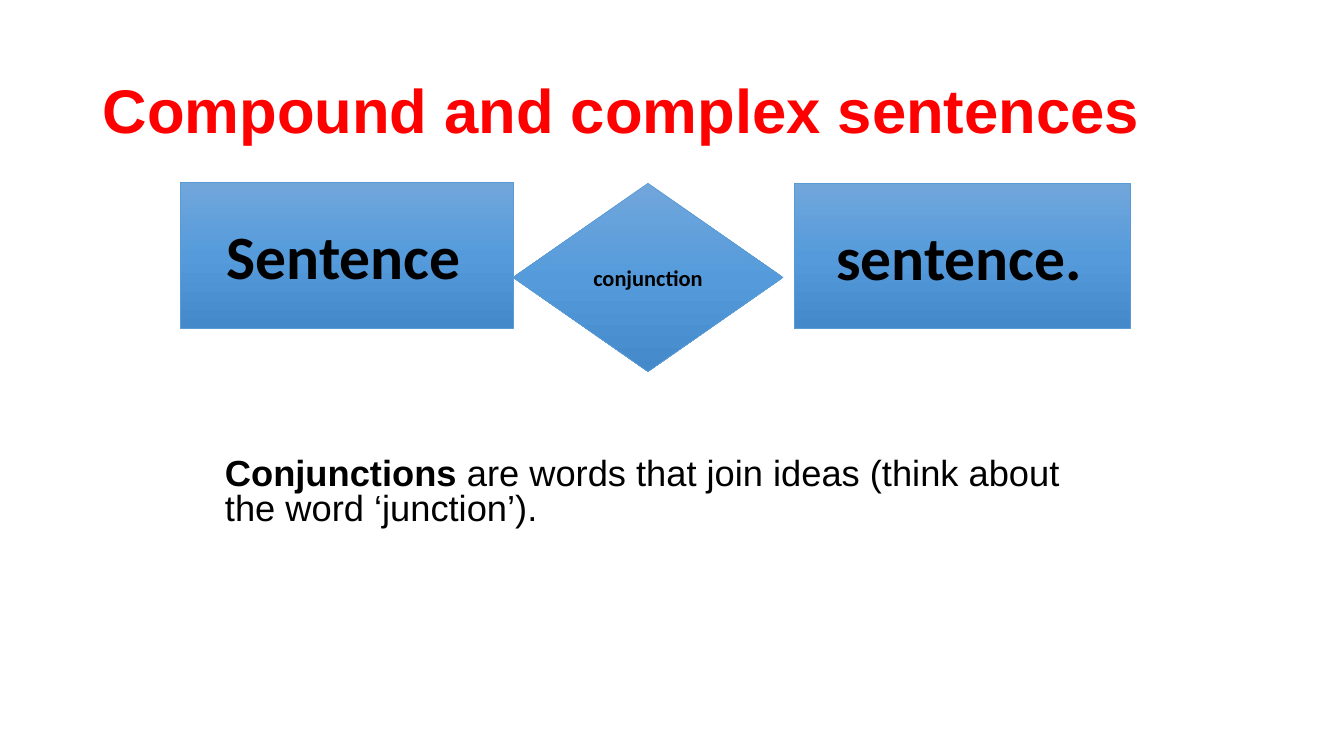
import copy
from dataclasses import dataclass

import pptx
import pptx.dml.color
import pptx.enum.shapes
import pptx.enum.text
import pptx.oxml.ns
import pptx.util

Align = pptx.enum.text.PP_ALIGN
Anchor = pptx.enum.text.MSO_ANCHOR
Preset = pptx.enum.shapes.MSO_SHAPE


@dataclass(frozen=True)
class Theme:
    title_color: str = "FF0000"
    text_color: str = "000000"
    outline_color: str = "5B9BD5"
    gradient: tuple = ((0, "71A6DB"), (0.5, "559BDB"), (1, "448ACA"))
    text_font: str = "Arial"
    shape_font: str = "Calibri"
    large_size: float = 44
    body_size: float = 25.9
    small_size: float = 16


def rgb(color):
    return pptx.dml.color.RGBColor.from_string(color)


def write_text(paragraph, text, *, font, size, color, bold=False):
    run = paragraph.add_run()
    run.text = text
    run.font.name = font
    run.font.size = pptx.util.Pt(size)
    run.font.color.rgb = rgb(color)
    run.font.bold = bold


class SlideBuilder:
    def __init__(self, presentation, theme):
        self.presentation = presentation
        self.theme = theme
        self.slide = presentation.slides.add_slide(presentation.slide_layouts[5])

    def area(self, left, top, width, height):
        slide_width = self.presentation.slide_width
        slide_height = self.presentation.slide_height
        return (
            round(slide_width * left / 100),
            round(slide_height * top / 100),
            round(slide_width * width / 100),
            round(slide_height * height / 100),
        )

    def prepare_frame(self, shape, anchor, alignment, top_inset=0.05, right_inset=0.1):
        frame = shape.text_frame
        frame.word_wrap = True
        frame.auto_size = pptx.enum.text.MSO_AUTO_SIZE.NONE
        frame.vertical_anchor = anchor
        frame.margin_top = pptx.util.Inches(top_inset)
        frame.margin_right = pptx.util.Inches(right_inset)
        paragraph = frame.paragraphs[0]
        paragraph.alignment = alignment
        return paragraph

    def title(self, text, area):
        shape = self.slide.shapes.title
        shape.left, shape.top, shape.width, shape.height = self.area(*area)
        paragraph = self.prepare_frame(shape, Anchor.MIDDLE, Align.LEFT)
        paragraph.line_spacing = 0.9
        write_text(paragraph, text, font=self.theme.text_font,
                   size=self.theme.large_size, color=self.theme.title_color, bold=True)

    def definition(self, term, meaning, area):
        shape = self.slide.shapes.add_textbox(*self.area(*area))
        paragraph = self.prepare_frame(shape, Anchor.TOP, Align.LEFT, top_inset=0.63)
        paragraph.line_spacing = 0.8
        for text, bold in ((term, True), (meaning, False)):
            write_text(paragraph, text, font=self.theme.text_font,
                       size=self.theme.body_size, color=self.theme.text_color, bold=bold)

    def apply_gradient(self, shape):
        fill = shape.fill
        fill.gradient()
        fill.gradient_angle = 270
        stop_list = shape.element.spPr.find(".//" + pptx.oxml.ns.qn("a:gsLst"))
        stop_list.insert(1, copy.deepcopy(stop_list[0]))
        for stop, (position, color) in zip(fill.gradient_stops, self.theme.gradient):
            stop.position = position
            stop.color.rgb = rgb(color)

    def block(self, preset, text, size, right_inset, area):
        shape = self.slide.shapes.add_shape(preset, *self.area(*area))
        shape.shadow.inherit = False
        self.apply_gradient(shape)
        shape.line.color.rgb = rgb(self.theme.outline_color)
        shape.line.width = pptx.util.Pt(0.5)
        paragraph = self.prepare_frame(shape, Anchor.MIDDLE, Align.CENTER,
                                       right_inset=right_inset)
        write_text(paragraph, text, font=self.theme.shape_font, size=size,
                   color=self.theme.text_color, bold=True)


def main():
    presentation = pptx.Presentation()
    presentation.slide_width = pptx.util.Inches(13.33)
    presentation.slide_height = pptx.util.Inches(7.5)
    theme = Theme()
    builder = SlideBuilder(presentation, theme)

    builder.title("Compound and complex sentences", (6.88, 5.33, 86.27, 19.33))
    builder.definition("Conjunctions",
                       " are words that join ideas (think about the word ‘junction’).",
                       (16, 52.27, 67.52, 17.73))
    large, small = theme.large_size, theme.small_size
    for preset, text, size, right_inset, area in (
        (Preset.RECTANGLE, "Sentence", large, 0.16, (13.43, 24.13, 24.76, 19.25)),
        (Preset.RECTANGLE, "sentence.", large, 0.16, (59.11, 24.27, 24.98, 19.2)),
        (Preset.DIAMOND, "conjunction", small, 0.1, (38.17, 24.25, 20.09, 24.9)),
    ):
        builder.block(preset, text, size, right_inset, area)

    presentation.save("out.pptx")


if __name__ == "__main__":
    main()
